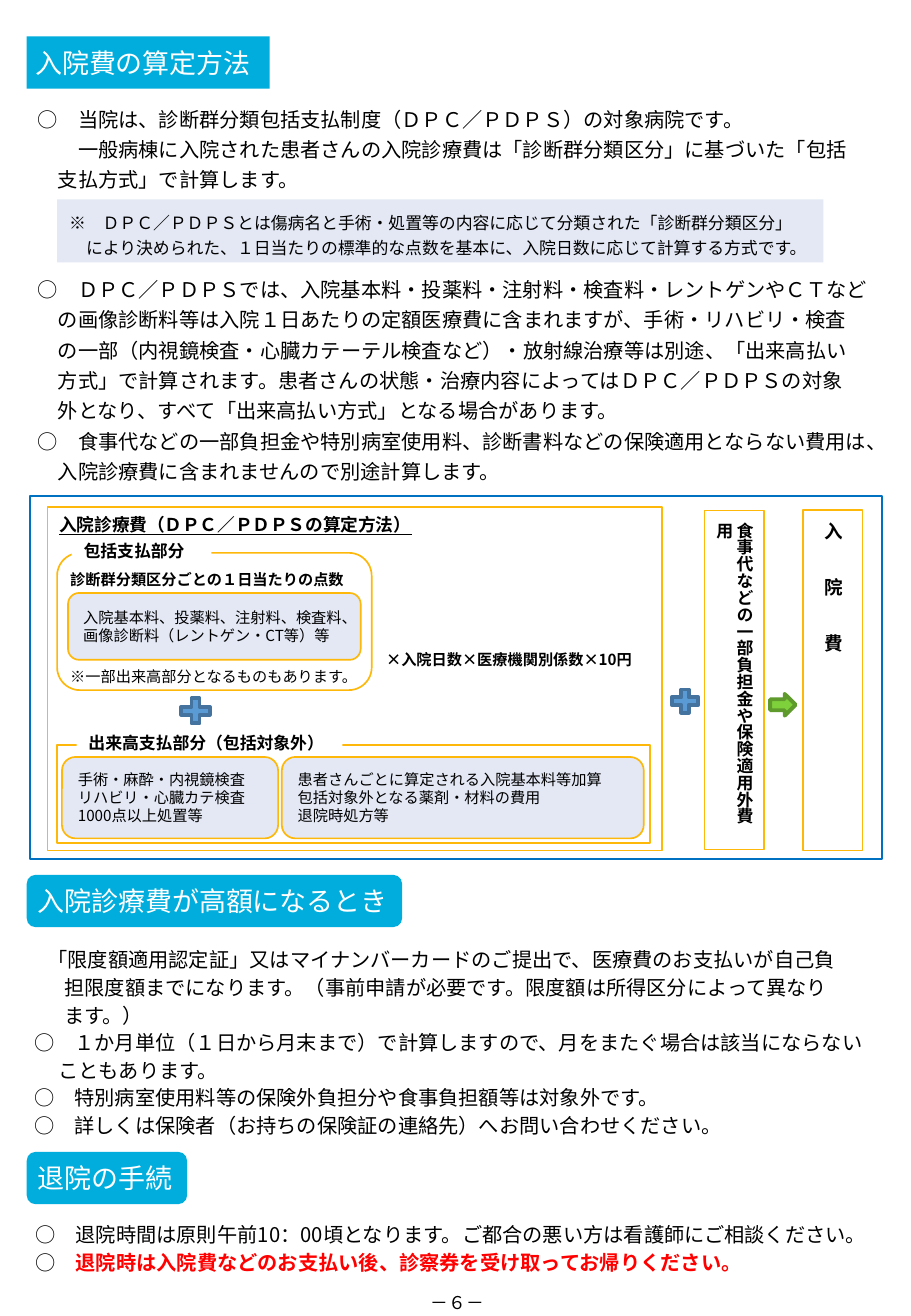
from lxml.etree import SubElement
from pptx import Presentation
from pptx.dml.color import RGBColor
from pptx.enum.shapes import MSO_SHAPE
from pptx.enum.text import MSO_ANCHOR, MSO_AUTO_SIZE, PP_ALIGN
from pptx.oxml.ns import qn
from pptx.util import Inches, Pt

WIDTH, HEIGHT = 7.5, 10.83
COLUMNS = 75
GOTHIC, SERIF, SANS = "Noto Sans CJK JP", "Cambria", "Calibri"
BLACK, WHITE, RED = "000000", "FFFFFF", "FF0000"
CYAN, PALE, AMBER, BLUE = "00ADDC", "E3E8F4", "FEB80A", "0070C0"
HANG = (0, 1.67)

HEADINGS = [
    ("入院費の算定方法", (2.2, 3, 20, 4.3)),
    ("入院診療費が高額になるとき", (2.2, 72, 30.9, 4.3)),
    ("退院の手続", (2.2, 94.8, 13.2, 4.3)),
]

SECTIONS = [
    ((2.1, 7.7, 72.5, 8.6), 18, [
        (*HANG, "○　当院は、診断群分類包括支払制度（ＤＰＣ／ＰＤＰＳ）の対象病院です。"),
        (3.33, 1.67, "一般病棟に入院された患者さんの入院診療費は「診断群分類区分」に基づいた「包括\n"
                     "支払方式」で計算します。"),
    ]),
    ((2.1, 21.7, 72.5, 18.7), 18, [
        (*HANG, "○　ＤＰＣ／ＰＤＰＳでは、入院基本料・投薬料・注射料・検査料・レントゲンやＣＴなど\n"
                "の画像診断料等は入院１日あたりの定額医療費に含まれますが、手術・リハビリ・検査\n"
                "の一部（内視鏡検査・心臓カテーテル検査など）・放射線治療等は別途、「出来高払い\n"
                "方式」で計算されます。患者さんの状態・治療内容によってはＤＰＣ／ＰＤＰＳの対象\n"
                "外となり、すべて「出来高払い方式」となる場合があります。"),
        (*HANG, "○　食事代などの一部負担金や特別病室使用料、診断書料などの保険適用とならない費用は、\n"
                "入院診療費に含まれませんので別途計算します。"),
    ]),
    ((1.8, 77.1, 72.5, 17.1), 16.4, [
        (1.1, 2.5, "「限度額適用認定証」又はマイナンバーカードのご提出で、医療費のお支払いが自己負\n"
                   "担限度額までになります。（事前申請が必要です。限度額は所得区分によって異なり\n"
                   "ます。）"),
        (0, 2, "○　１か月単位（１日から月末まで）で計算しますので、月をまたぐ場合は該当にならない\n"
               "こともあります。"),
        (*HANG, "○　特別病室使用料等の保険外負担分や食事負担額等は対象外です。"),
        (*HANG, "○　詳しくは保険者（お持ちの保険証の連絡先）へお問い合わせください。"),
    ]),
    ((1.9, 99.7, 72.5, 5.6), 16.4, [
        (*HANG, "○　退院時間は原則午前10：00頃となります。ご都合の悪い方は看護師にご相談ください。"),
        (*HANG, "○　", "退院時は入院費などのお支払い後、診察券を受け取ってお帰りください。"),
    ]),
]

NOTE = ((4.7, 16.4, 63.1, 5.2), [
    (0, 1.4, "※　ＤＰＣ／ＰＤＰＳとは傷病名と手術・処置等の内容に応じて分類された「診断群分類区分」\n"
             "により決められた、１日当たりの標準的な点数を基本に、入院日数に応じて計算する方式です。"),
])

FRAMES = [
    (MSO_SHAPE.RECTANGLE, (2.5, 40.8, 70.1, 29.9), None, BLUE, 1.25),
    (MSO_SHAPE.RECTANGLE, (3.9, 41.7, 50.6, 28.3), None, AMBER, 1),
    (MSO_SHAPE.ROUNDED_RECTANGLE, (4.7, 45.5, 25.9, 11.3), WHITE, AMBER, 1),
    (MSO_SHAPE.RECTANGLE, (4.7, 61.3, 48.8, 8.1), WHITE, AMBER, 1),
    (MSO_SHAPE.MATH_PLUS, (14.5, 57.1, 3.2, 2.8), "5B9BD5", "43739E", 2.25),
    (MSO_SHAPE.MATH_PLUS, (54.9, 56.4, 3, 2.6), "5B9BD5", "43739E", 2.25),
    (MSO_SHAPE.RIGHT_ARROW, (63.4, 57.1, 2.1, 1.8), "7FD13B", "5E9B2C", 2.25),
]

PART_LABELS = [
    ("包括支払部分", (5.9, 43.9, 11.5, 2.3)),
    ("出来高支払部分（包括対象外）", (6.3, 59.7, 21.9, 3.2)),
]

COST_ITEMS = [
    (MSO_SHAPE.FLOWCHART_ALTERNATE_PROCESS, (5.6, 48.8, 24.1, 5.5),
     "入院基本料、投薬料、注射料、検査料、\n画像診断料（レントゲン・CT等）等"),
    (MSO_SHAPE.ROUNDED_RECTANGLE, (5.1, 62.3, 17.8, 6.7),
     "手術・麻酔・内視鏡検査\nリハビリ・心臓カテ検査\n1000点以上処置等"),
    (MSO_SHAPE.ROUNDED_RECTANGLE, (23.2, 62.3, 29.8, 6.7),
     "患者さんごとに算定される入院基本料等加算\n包括対象外となる薬剤・材料の費用\n退院時処方等"),
]

UPRIGHT = [
    ("食事代などの一部負担金や保険適用外費用", (58, 42, 4.9, 27.9), 10, 0),
    ("入院費", (66.1, 42, 4.9, 28), 11, 22),
]

CAPTIONS = [
    ("入院診療費（ＤＰＣ／ＰＤＰＳの算定方法）", (3.9, 41.7, 36.3, 2.8),
     dict(size=10.5, bold=True, underline=True)),
    ("※一部出来高部分となるものもあります。", (4.8, 54.3, 26, 2.5), dict(size=9)),
    ("×入院日数×医療機関別係数×10円", (30.8, 52.9, 23.9, 2.5), dict(size=9, bold=True)),
    ("診断群分類区分ごとの１日当たりの点数", (4.8, 46.3, 25.2, 2.5), dict(size=9, bold=True)),
    ("－６－", (34.5, 105.7, 6, 2.5), dict(size=10.5, font=SANS)),
]


def grid(count):
    return Inches(count * WIDTH / COLUMNS)


def rgb(value):
    return RGBColor.from_string(value)


def place(shape, box):
    shape.left, shape.top, shape.width, shape.height = map(grid, box)
    return shape


def write(shape, text, size=12, font=GOTHIC, color=BLACK, bold=False, underline=False,
          pitch=None, anchor=MSO_ANCHOR.TOP, inset=1, upright=False, tracking=0):
    frame = shape.text_frame
    frame.word_wrap = True
    frame.auto_size = MSO_AUTO_SIZE.NONE
    frame.vertical_anchor = anchor
    frame.margin_left, frame.margin_right = grid(inset), 0
    frame.margin_top = frame.margin_bottom = grid(0.6)
    if upright:
        frame.margin_left = frame.margin_top = frame.margin_bottom = grid(0.5)
        frame.margin_right = grid(0.5)
        frame._txBody.bodyPr.set("vert", "eaVert")
    paragraphs = [(0, 0, text)] if isinstance(text, str) else text
    for index, (first, left, body, *alert) in enumerate(paragraphs):
        paragraph = frame.add_paragraph() if index else frame.paragraphs[0]
        paragraph.alignment = PP_ALIGN.LEFT
        paragraph.line_spacing = Pt(pitch or round(size * 1.2, 1))
        paragraph.space_before = paragraph.space_after = Pt(0)
        properties = paragraph._p.get_or_add_pPr()
        properties.set("marL", str(grid(left)))
        properties.set("indent", str(grid(first) - grid(left)))
        SubElement(properties, qn("a:buNone"))
        pieces = [(line, color, bold) for line in body.split("\n")]
        pieces += [(line, RED, True) for line in alert]
        for number, (line, ink, heavy) in enumerate(pieces):
            if number and not alert:
                paragraph.add_line_break()
            run = paragraph.add_run()
            run.text = line
            run.font.size, run.font.name = Pt(size), font
            run.font.bold, run.font.underline = heavy, underline
            run.font.color.rgb = rgb(ink)
            SubElement(run._r.get_or_add_rPr(), qn("a:ea")).set("typeface", GOTHIC)
            if tracking:
                run._r.get_or_add_rPr().set("spc", str(tracking * 100))


def draw(slide, kind, box, fill=None, line=None, weight=1):
    shape = slide.shapes.add_shape(kind, *map(grid, box))
    shape.shadow.inherit = False
    if fill:
        shape.fill.solid()
        shape.fill.fore_color.rgb = rgb(fill)
    else:
        shape.fill.background()
    if line:
        shape.line.color.rgb = rgb(line)
        shape.line.width = Pt(weight)
    else:
        shape.line.fill.background()
    return shape


def main():
    deck = Presentation()
    deck.slide_width, deck.slide_height = Inches(WIDTH), Inches(HEIGHT)
    slide = deck.slides.add_slide(deck.slide_layouts.get_by_name("Comparison"))
    title, *bodies = slide.placeholders

    for index, (heading, box) in enumerate(HEADINGS):
        if index:
            banner = draw(slide, MSO_SHAPE.ROUNDED_RECTANGLE, box, CYAN)
        else:
            banner = place(title, box)
            SubElement(banner._element.spPr, qn("a:prstGeom")).set("prst", "roundRect")
            banner.fill.solid()
            banner.fill.fore_color.rgb = rgb(CYAN)
        write(banner, heading, size=16, color=WHITE, anchor=MSO_ANCHOR.MIDDLE, inset=0.7)

    for body, (box, pitch, paragraphs) in zip(bodies, SECTIONS):
        write(place(body, box), paragraphs, pitch=pitch)

    note_box, note = NOTE
    write(draw(slide, MSO_SHAPE.RECTANGLE, note_box, PALE), note, size=10, pitch=15.3)

    for frame in FRAMES:
        draw(slide, *frame)
    for label, box in PART_LABELS:
        write(draw(slide, MSO_SHAPE.RECTANGLE, box, WHITE), label, size=10, font=SERIF, bold=True)
    for kind, box, items in COST_ITEMS:
        write(draw(slide, kind, box, PALE, AMBER), items, size=9, anchor=MSO_ANCHOR.MIDDLE)
    for label, box, size, tracking in UPRIGHT:
        write(draw(slide, MSO_SHAPE.RECTANGLE, box, line=AMBER), label, size=size, font=SERIF,
              bold=True, anchor=MSO_ANCHOR.MIDDLE, upright=True, tracking=tracking)
    for caption, box, style in CAPTIONS:
        write(slide.shapes.add_textbox(*map(grid, box)), caption, **style)

    deck.save("out.pptx")


if __name__ == "__main__":
    main()
